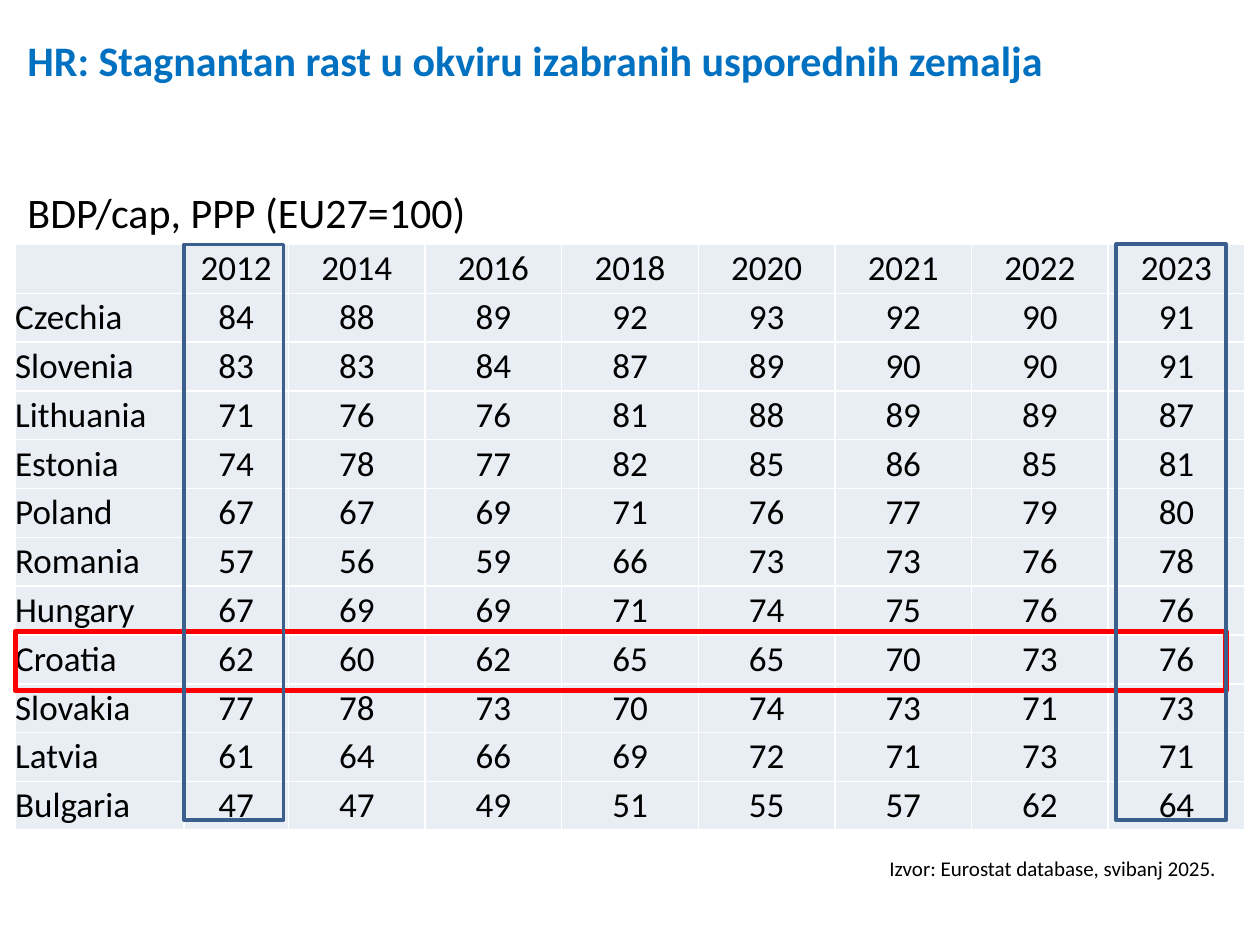
"""Builds a slide that compares GDP per capita of selected countries in a table."""
from typing import NamedTuple

from lxml.etree import SubElement
from pptx import Presentation
from pptx.dml.color import RGBColor
from pptx.enum.shapes import MSO_SHAPE
from pptx.enum.text import MSO_ANCHOR, PP_ALIGN
from pptx.oxml.ns import qn
from pptx.util import Inches, Pt

FONT = "Calibri"
BLACK, WHITE, BLUE, NAVY, RED, PALE = "000000", "FFFFFF", "0070C0", "3A5F8C", "FF0000", "E9EDF4"
LEFT, TOP, WIDTH, HEIGHT = 0.12, 1.94, 9.76, 4.65
COUNTRY_W, FIRST_YEAR_W = 1.34, 0.83

YEARS = (2012, 2014, 2016, 2018, 2020, 2021, 2022, 2023)
GDP = {
    "Czechia": (84, 88, 89, 92, 93, 92, 90, 91),
    "Slovenia": (83, 83, 84, 87, 89, 90, 90, 91),
    "Lithuania": (71, 76, 76, 81, 88, 89, 89, 87),
    "Estonia": (74, 78, 77, 82, 85, 86, 85, 81),
    "Poland": (67, 67, 69, 71, 76, 77, 79, 80),
    "Romania": (57, 56, 59, 66, 73, 73, 76, 78),
    "Hungary": (67, 69, 69, 71, 74, 75, 76, 76),
    "Croatia": (62, 60, 62, 65, 65, 70, 73, 76),
    "Slovakia": (77, 78, 73, 70, 74, 73, 71, 73),
    "Latvia": (61, 64, 66, 69, 72, 71, 73, 71),
    "Bulgaria": (47, 47, 49, 51, 55, 57, 62, 64),
}


class Frame(NamedTuple):
    left: float
    top: float
    width: float
    height: float
    color: str
    weight: float


FRAMES = (
    Frame(LEFT, 5.01, 9.61, 0.47, RED, 3),
    Frame(LEFT + COUNTRY_W, TOP, 0.79, 4.57, NAVY, 2),
    Frame(8.86, TOP, 0.87, 4.57, NAVY, 2.25),
)


def rgb(color: str) -> RGBColor:
    return RGBColor.from_string(color)


def add_run(p, text: str, size: float, color: str = BLACK, bold: bool = False) -> None:
    r = p.add_run()
    r.text = text
    r.font.name, r.font.size, r.font.bold = FONT, Pt(size), bold
    r.font.color.rgb = rgb(color)


def add_text_box(s, left: float, top: float, width: float, height: float):
    tf = s.shapes.add_textbox(*map(Inches, (left, top, width, height))).text_frame
    tf.word_wrap = True
    return tf


def add_title(s) -> None:
    tf = add_text_box(s, LEFT, 0.3, 9, 1.56)
    tf.vertical_anchor = MSO_ANCHOR.MIDDLE
    add_run(tf.paragraphs[0], "HR: Stagnantan rast u okviru izabranih usporednih zemalja", 24, BLUE, True)
    p = tf.add_paragraph()
    p.space_before = Pt(58)
    add_run(p, "BDP/cap, PPP (EU27=100)", 24)


def style_cell(cell) -> None:
    tc_pr = cell._tc.get_or_add_tcPr()
    for side in ("a:lnL", "a:lnR", "a:lnT", "a:lnB"):
        ln = SubElement(tc_pr, qn(side), w=str(Pt(1)))
        SubElement(SubElement(ln, qn("a:solidFill")), qn("a:srgbClr"), val=WHITE)
    cell.fill.solid()
    cell.fill.fore_color.rgb = rgb(PALE)
    cell.margin_left = cell.margin_right = cell.margin_top = cell.margin_bottom = 0
    cell.vertical_anchor = MSO_ANCHOR.MIDDLE


def add_gdp_table(s) -> None:
    rows = [("", *YEARS), *((country, *values) for country, values in GDP.items())]
    box = map(Inches, (LEFT, TOP, WIDTH, HEIGHT))
    table = s.shapes.add_table(len(rows), len(rows[0]), *box).table
    year_w = (WIDTH - COUNTRY_W - FIRST_YEAR_W) / (len(YEARS) - 1)
    widths = [COUNTRY_W, FIRST_YEAR_W] + [year_w] * (len(YEARS) - 1)
    for column, width in zip(table.columns, widths):
        column.width = Inches(width)
    for i, row in enumerate(rows):
        table.rows[i].height = Inches(HEIGHT / len(rows))
        for j, value in enumerate(row):
            cell = table.cell(i, j)
            style_cell(cell)
            p = cell.text_frame.paragraphs[0]
            p.alignment = PP_ALIGN.CENTER if j else PP_ALIGN.LEFT
            if value:
                add_run(p, str(value), 20)


def add_frame(s, frame: Frame) -> None:
    box = map(Inches, (frame.left, frame.top, frame.width, frame.height))
    sp = s.shapes.add_shape(MSO_SHAPE.RECTANGLE, *box)
    sp.shadow.inherit = False
    sp.fill.background()
    sp.line.color.rgb = rgb(frame.color)
    sp.line.width = Pt(frame.weight)


def main() -> None:
    prs = Presentation()
    prs.slide_width, prs.slide_height = Inches(10), Inches(7.5)
    s = prs.slides.add_slide(prs.slide_layouts[6])
    add_title(s)
    add_gdp_table(s)
    source = add_text_box(s, 6.96, 6.74, 2.92, 0.3)
    add_run(source.paragraphs[0], "Izvor: Eurostat database, svibanj 2025.", 12)
    for frame in FRAMES:
        add_frame(s, frame)
    prs.save("out.pptx")


if __name__ == "__main__":
    main()
